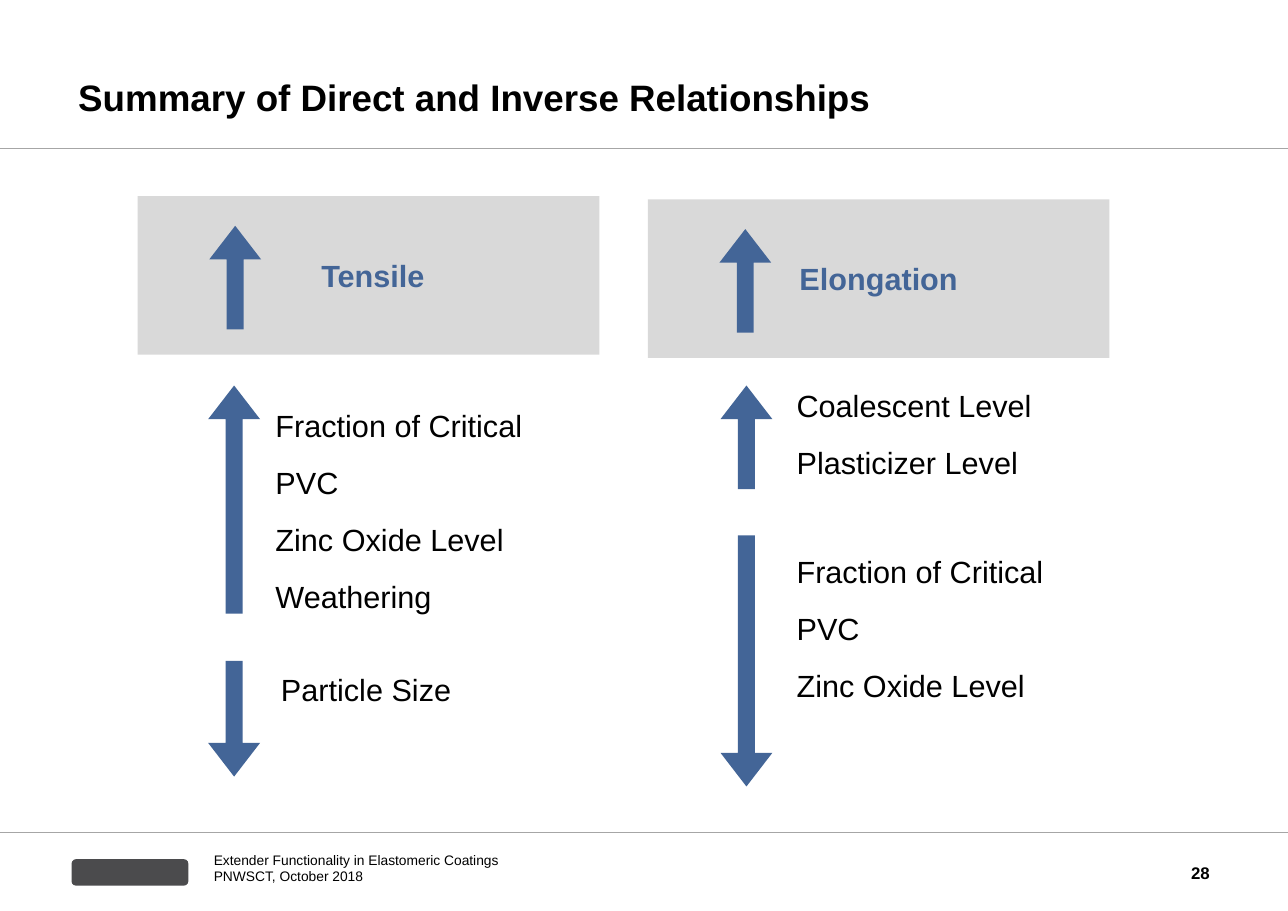
from lxml import etree
from pptx import Presentation
from pptx.dml.color import RGBColor
from pptx.enum.shapes import MSO_CONNECTOR, MSO_SHAPE
from pptx.enum.text import MSO_ANCHOR, MSO_AUTO_SIZE, PP_ALIGN
from pptx.oxml.ns import qn
from pptx.util import Inches, Pt

COLORS = {"text": "000000", "rule": "A6A6A6", "arrow": "436597",
          "panel": "D9D9D9", "logo": "4B4B4D"}
WIDTH, HEIGHT = 11.69, 8.27
ARROW_WIDTH = 0.47


def color(name):
    return RGBColor.from_string(COLORS[name])


class SlideBuilder:
    font = "Arial"

    def __init__(self, slide):
        self.slide = slide

    def fill_text(self, shape, lines, size, tone="text", bold=False, margin=0,
                  anchor=MSO_ANCHOR.TOP, align=PP_ALIGN.LEFT, spacing=1.0, gap=0):
        frame = shape.text_frame
        frame.word_wrap = True
        frame.auto_size = MSO_AUTO_SIZE.NONE
        frame.vertical_anchor = anchor
        frame.margin_left = frame.margin_right = Inches(margin)
        frame.margin_top = frame.margin_bottom = Inches(margin)
        for index, line in enumerate(lines):
            paragraph = frame.add_paragraph() if index else frame.paragraphs[0]
            paragraph.alignment = align
            paragraph.line_spacing = spacing
            paragraph.space_before = Pt(gap if index else 0)
            paragraph.space_after = Pt(gap)
            run = paragraph.add_run()
            run.text = line
            run.font.name = self.font
            run.font.size = Pt(size)
            run.font.bold = bold
            run.font.color.rgb = color(tone)

    def place(self, placeholder, left, top, width, height):
        placeholder.left, placeholder.top = Inches(left), Inches(top)
        placeholder.width, placeholder.height = Inches(width), Inches(height)

    def title(self, text):
        title = self.slide.shapes.title
        self.place(title, 0.71, 0.21, 10.27, 0.87)
        self.fill_text(title, [text], 24, bold=True, anchor=MSO_ANCHOR.BOTTOM)

    def factors(self, index, left, top, width, lines):
        body = self.slide.placeholders[index]
        self.place(body, left, top, width, 0.5 * len(lines))
        self.fill_text(body, lines, 20, spacing=1.05, gap=6)
        for paragraph in body.text_frame.paragraphs:
            properties = paragraph._p.get_or_add_pPr()
            properties.set("marL", "0")
            properties.set("indent", "0")
            etree.SubElement(properties, qn("a:buNone"))

    def text(self, left, top, width, height, lines, size, **style):
        box = self.slide.shapes.add_textbox(
            Inches(left), Inches(top), Inches(width), Inches(height))
        self.fill_text(box, lines, size, anchor=MSO_ANCHOR.MIDDLE, **style)

    def shape(self, kind, left, top, width, height, fill):
        shape = self.slide.shapes.add_shape(
            kind, Inches(left), Inches(top), Inches(width), Inches(height))
        shape.shadow.inherit = False
        shape.fill.solid()
        shape.fill.fore_color.rgb = color(fill)
        shape.line.fill.background()
        return shape

    def arrow(self, kind, left, top, length):
        arrow = self.shape(kind, left, top, ARROW_WIDTH, length, "arrow")
        arrow.adjustments[0] = 0.325
        arrow.adjustments[1] = 0.649

    def panel(self, left, top, label, shift=0):
        panel = self.shape(MSO_SHAPE.RECTANGLE, left, top, 4.19, 1.44, "panel")
        self.fill_text(panel, [label], 20, "arrow", True, 0.12,
                       MSO_ANCHOR.MIDDLE, PP_ALIGN.CENTER)
        panel.text_frame.margin_left = Inches(0.12 + shift)
        self.arrow(MSO_SHAPE.UP_ARROW, left + 0.65, top + 0.27, 0.94)

    def rule(self, top, weight):
        rule = self.slide.shapes.add_connector(
            MSO_CONNECTOR.STRAIGHT, 0, Inches(top), Inches(WIDTH), Inches(top))
        rule.line.color.rgb = color("rule")
        rule.line.width = Pt(weight)
        etree.SubElement(rule._element.spPr, qn("a:effectLst"))


def main():
    presentation = Presentation()
    presentation.slide_width = Inches(WIDTH)
    presentation.slide_height = Inches(HEIGHT)
    comparison = presentation.slide_layouts[4]
    builder = SlideBuilder(presentation.slides.add_slide(comparison))

    # Title and rules
    builder.title("Summary of Direct and Inverse Relationships")
    builder.rule(1.35, 0.75)
    builder.rule(7.56, 0.5)

    # Property panels
    builder.panel(1.25, 1.78, "Tensile", shift=0.08)
    builder.panel(5.88, 1.81, "Elongation")

    # Tensile: direct, then inverse factors
    builder.arrow(MSO_SHAPE.UP_ARROW, 1.89, 3.5, 2.07)
    builder.factors(1, 2.5, 3.68, 2.5, ["Fraction of Critical", "PVC",
                                        "Zinc Oxide Level", "Weathering"])
    builder.arrow(MSO_SHAPE.DOWN_ARROW, 1.89, 6.0, 1.05)
    builder.factors(2, 2.55, 6.07, 3.49, ["Particle Size"])

    # Elongation: direct, then inverse factors
    builder.arrow(MSO_SHAPE.UP_ARROW, 6.54, 3.5, 0.94)
    builder.factors(3, 7.23, 3.5, 3.49, ["Coalescent Level", "Plasticizer Level"])
    builder.arrow(MSO_SHAPE.DOWN_ARROW, 6.54, 4.86, 2.28)
    builder.factors(4, 7.23, 5.0, 3.49, ["Fraction of Critical", "PVC",
                                         "Zinc Oxide Level"])

    # Footer
    builder.shape(MSO_SHAPE.ROUNDED_RECTANGLE, 0.65, 7.8, 1.06, 0.24, "logo")
    builder.text(1.94, 7.73, 4.91, 0.31,
                 ["Extender Functionality in Elastomeric Coatings",
                  "PNWSCT, October 2018"], 9, spacing=Pt(10.4))
    builder.text(10.09, 7.69, 0.89, 0.47, ["28"], 11, bold=True,
                 align=PP_ALIGN.RIGHT)

    presentation.save("out.pptx")


if __name__ == "__main__":
    main()
